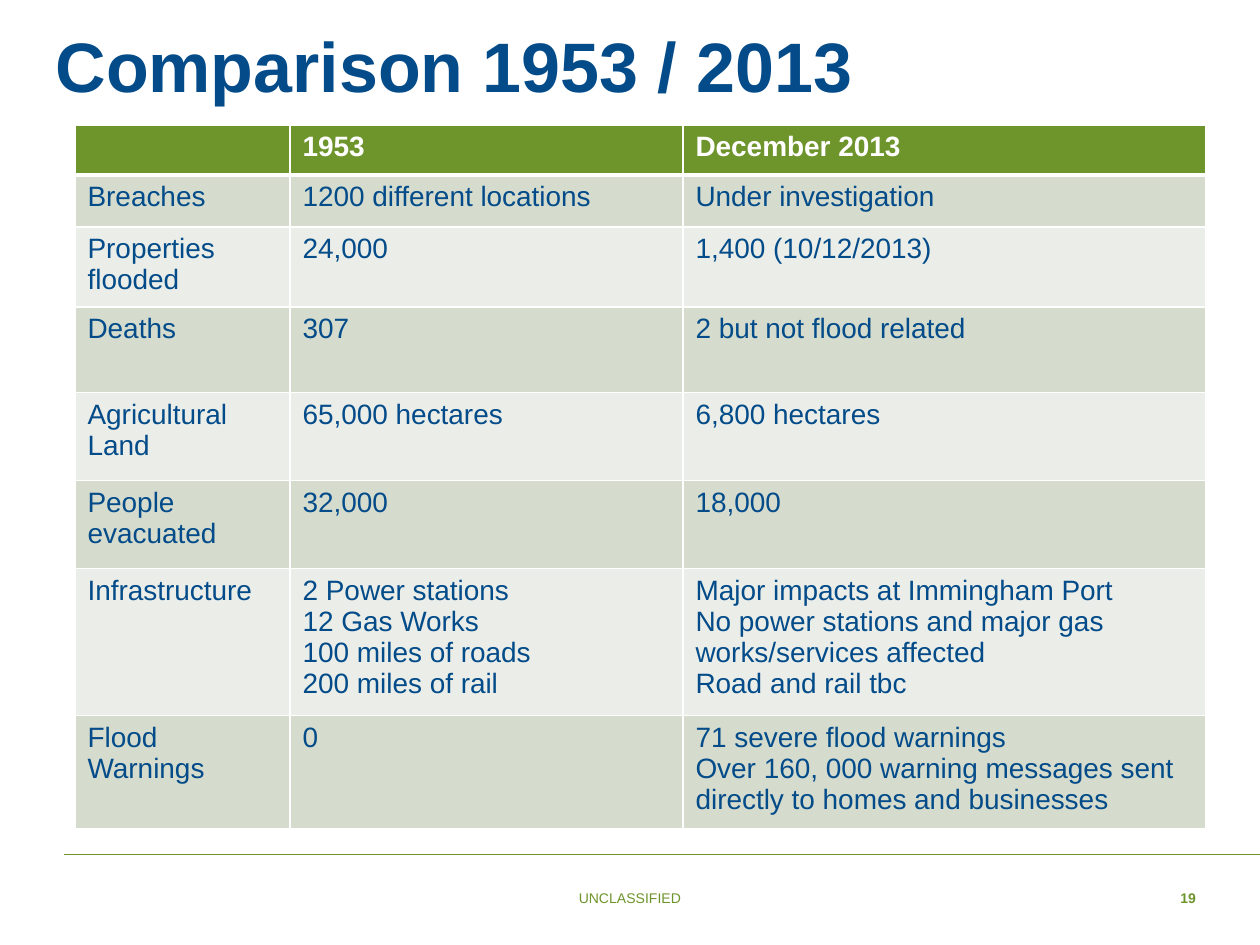
"""Builds a slide comparing the 1953 and 2013 floods in a table."""
from lxml import etree
from pptx import Presentation
from pptx import util as u
from pptx.dml.color import RGBColor
from pptx.enum import shapes, text
from pptx.oxml.ns import qn

PX = u.Inches(1) // 126
WHITE = RGBColor(0xFF, 0xFF, 0xFF)
GREEN = RGBColor(0x6E, 0x94, 0x2C)
BLUE = RGBColor(0x03, 0x4B, 0x89)
BANDS = RGBColor(0xD5, 0xDC, 0xCD), RGBColor(0xEB, 0xEE, 0xE8)

TITLE = "Comparison 1953 / 2013"
ROWS = [
    (50, "", "1953", "December 2013"),
    (52, "Breaches", "1200 different locations", "Under investigation"),
    (74, "Properties flooded", "24,000", "1,400 (10/12/2013)"),
    (86, "Deaths", "307", "2 but not flood related"),
    (88, "Agricultural Land", "65,000 hectares", "6,800 hectares"),
    (88, "People evacuated", "32,000", "18,000"),
    (137, "Infrastructure",
     "2 Power stations\n12 Gas Works\n100 miles of roads\n200 miles of rail",
     "Major impacts at Immingham Port\n"
     "No power stations and major gas works/services affected\n"
     "Road and rail tbc"),
    (106, "Flood Warnings", "0",
     "71 severe flood warnings\n"
     "Over 160, 000 warning messages sent directly to homes and businesses"),
]
COLUMNS = [215, 393, 523]
TABLE_LEFT, TABLE_TOP = 75, 125
RULE_LEFT, RULE_Y, SLIDE_WIDTH, SLIDE_HEIGHT = 64, 854, 1260, 945
FOOTERS = [
    ("UNCLASSIFIED", 64, 1132, text.PP_ALIGN.CENTER, False),
    ("19", 1142, 54, text.PP_ALIGN.RIGHT, True),
]


def apply(target, **values):
    for name, value in values.items():
        setattr(target, name, value)


def place(shape, left, top, width, height):
    apply(shape, left=left * PX, top=top * PX, width=width * PX, height=height * PX)


def write(frame, words, size, color, bold, **paragraph_format):
    frame.text = words
    for para in frame.paragraphs:
        apply(para, **paragraph_format)
        for font in [para.font] + [span.font for span in para.runs]:
            apply(font, name="Arial", size=u.Pt(size), bold=bold)
            font.color.rgb = color


def add_borders(cell, **widths):
    properties = cell._tc.get_or_add_tcPr()
    for index, (side, width) in enumerate(widths.items()):
        line = etree.Element(qn(f"a:ln{side}"), w=str(u.Pt(width)))
        fill = etree.SubElement(line, qn("a:solidFill"))
        etree.SubElement(fill, qn("a:srgbClr"), val=str(WHITE))
        properties.insert(index, line)


def add_title(page):
    title = page.shapes.title
    place(title, 43, 16, 830, 97)
    write(title.text_frame, TITLE, 40, BLUE, True, alignment=text.PP_ALIGN.LEFT)
    apply(title.text_frame, word_wrap=False, vertical_anchor=text.MSO_ANCHOR.TOP,
          auto_size=text.MSO_AUTO_SIZE.SHAPE_TO_FIT_TEXT)


def add_comparison(page):
    heights = [row[0] for row in ROWS]
    table = page.shapes.add_table(
        len(ROWS), len(COLUMNS), TABLE_LEFT * PX, TABLE_TOP * PX,
        sum(COLUMNS) * PX, sum(heights) * PX).table
    for column, width in zip(table.columns, COLUMNS):
        column.width = width * PX
    for index, (height, *entries) in enumerate(ROWS):
        header = index == 0
        table.rows[index].height = height * PX
        for cell, words in zip(table.rows[index].cells, entries):
            write(cell.text_frame, words, 16, WHITE if header else BLUE, header)
            cell.fill.solid()
            cell.fill.fore_color.rgb = GREEN if header else BANDS[(index - 1) % 2]
            add_borders(cell, L=1, R=1, T=3 if index == 1 else 1, B=3 if header else 1)


def add_footer(page):
    rule = page.shapes.add_connector(
        shapes.MSO_CONNECTOR.STRAIGHT, RULE_LEFT * PX, RULE_Y * PX,
        SLIDE_WIDTH * PX, RULE_Y * PX)
    rule.line.color.rgb = GREEN
    rule.line.width = u.Pt(0.5)
    etree.SubElement(rule._element.spPr, qn("a:effectLst"))
    for words, left, width, alignment, bold in FOOTERS:
        box = page.shapes.add_textbox(0, 0, 0, 0)
        place(box, left, RULE_Y, width, 53)
        write(box.text_frame, words, 8, GREEN, bold, alignment=alignment, line_spacing=0.95)
        apply(box.text_frame, word_wrap=True, vertical_anchor=text.MSO_ANCHOR.BOTTOM,
              margin_left=0, margin_right=0, margin_top=0, margin_bottom=0)


def main():
    deck = Presentation()
    apply(deck, slide_width=SLIDE_WIDTH * PX, slide_height=SLIDE_HEIGHT * PX)
    page = deck.slides.add_slide(deck.slide_layouts[5])
    add_footer(page)
    add_comparison(page)
    add_title(page)
    deck.save("out.pptx")


if __name__ == "__main__":
    main()
